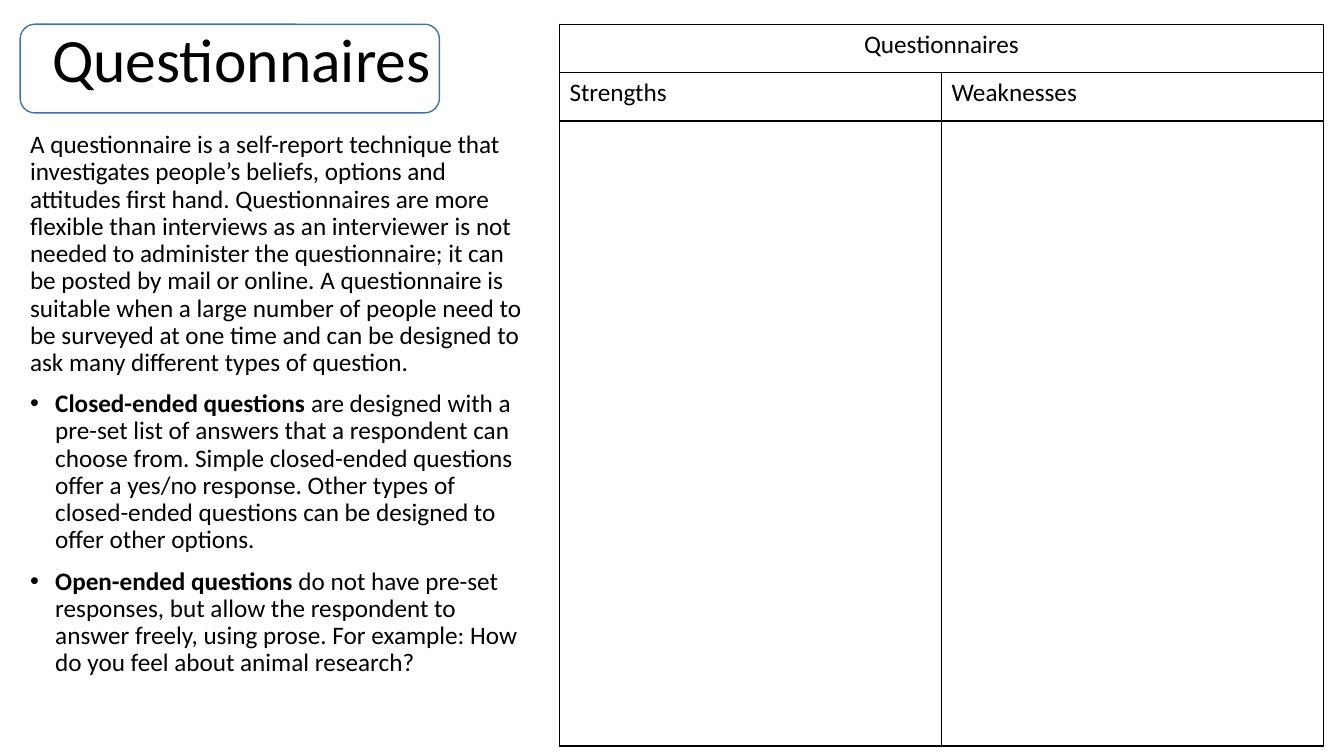
from dataclasses import dataclass

from lxml.etree import SubElement
from pptx import Presentation
from pptx.dml.color import RGBColor
from pptx.enum.shapes import MSO_SHAPE
from pptx.enum.text import MSO_ANCHOR, PP_ALIGN
from pptx.oxml.ns import qn
from pptx.util import Pt


@dataclass(frozen=True)
class Theme:
    """Colours, font and type sizes of the slide."""

    font: str = "Calibri"
    ink: str = "000000"
    frame: str = "43739E"
    title_size: int = 44
    body_size: int = 18


THEME = Theme()

DEFINITION = (
    "A questionnaire is a self-report technique that investigates people’s beliefs, "
    "options and attitudes first hand. Questionnaires are more flexible than interviews "
    "as an interviewer is not needed to administer the questionnaire; it can be posted "
    "by mail or online. A questionnaire is suitable when a large number of people need "
    "to be surveyed at one time and can be designed to ask many different types of question."
)
QUESTION_TYPES = [
    ("Closed-ended questions ",
     "are designed with a pre-set list of answers that a respondent can choose from. "
     "Simple closed-ended questions offer a yes/no response. Other types of closed-ended "
     "questions can be designed to offer other options."),
    ("Open-ended questions ",
     "do not have pre-set responses, but allow the respondent to answer freely, using "
     "prose. For example: How do you feel about animal research?"),
]


def style(paragraph, size):
    """Set the theme font, ink and a size on a paragraph."""
    paragraph.font.name = THEME.font
    paragraph.font.size = Pt(size)
    paragraph.font.color.rgb = RGBColor.from_string(THEME.ink)


def add_text_frame(slide, left, top, width, height, anchor):
    """Add a wrapping text box and return its text frame."""
    frame = slide.shapes.add_textbox(Pt(left), Pt(top), Pt(width), Pt(height)).text_frame
    frame.word_wrap = True
    frame.vertical_anchor = anchor
    return frame


def add_title(slide, wording):
    """Add the slide title."""
    frame = add_text_frame(slide, 30.24, 17.28, 335.5, 55.44, MSO_ANCHOR.MIDDLE)
    title = frame.paragraphs[0]
    title.text = wording
    title.line_spacing = 0.9
    style(title, THEME.title_size)


def make_bullet(paragraph, indent):
    """Give a paragraph a round bullet with a hanging indent."""
    properties = paragraph._p.get_or_add_pPr()
    properties.set("marL", str(Pt(indent)))
    properties.set("indent", str(-Pt(indent)))
    SubElement(properties, qn("a:buFont")).set("typeface", "Arial")
    SubElement(properties, qn("a:buChar")).set("char", "•")


def add_explanation(slide):
    """Add the definition followed by the bulleted question types."""
    frame = add_text_frame(slide, 14.4, 90.72, 369.36, 417.6, MSO_ANCHOR.TOP)
    frame.paragraphs[0].text = DEFINITION
    for term, meaning in QUESTION_TYPES:
        question_type = frame.add_paragraph()
        term_run = question_type.add_run()
        term_run.text = term
        term_run.font.bold = True
        question_type.add_run().text = meaning
    for paragraph in frame.paragraphs:
        paragraph.line_spacing = 0.9
        paragraph.space_before = Pt(10)
        style(paragraph, THEME.body_size)
    for question_type in frame.paragraphs[1:]:
        make_bullet(question_type, 18)


def add_borders(cell):
    """Draw a thin line on all four sides of a cell."""
    properties = cell._tc.get_or_add_tcPr()
    for position, side in enumerate(("lnL", "lnR", "lnT", "lnB")):
        border = properties.makeelement(qn(f"a:{side}"), {"w": str(Pt(1))})
        fill = SubElement(border, qn("a:solidFill"))
        SubElement(fill, qn("a:srgbClr")).set("val", THEME.ink)
        properties.insert(position, border)


def add_evaluation_table(slide):
    """Add the strengths and weaknesses table with room for answers."""
    wording = [["Questionnaires", ""], ["Strengths", "Weaknesses"], ["", ""]]
    row_heights = [34.56, 34.56, 446.4]
    table = slide.shapes.add_table(
        3, 2, Pt(399.6), Pt(17.28), Pt(545.76), Pt(sum(row_heights))).table
    table.first_row = table.horz_banding = False
    for row, height, texts in zip(table.rows, row_heights, wording):
        row.height = Pt(height)
        for cell, text in zip(row.cells, texts):
            cell.text = text
            style(cell.text_frame.paragraphs[0], THEME.body_size)
            cell.fill.background()
            add_borders(cell)
    heading = table.cell(0, 0)
    heading.merge(table.cell(0, 1))
    heading.text_frame.paragraphs[0].alignment = PP_ALIGN.CENTER


def add_title_frame(slide):
    """Outline the title with a rounded rectangle."""
    outline = slide.shapes.add_shape(
        MSO_SHAPE.ROUNDED_RECTANGLE, Pt(14.4), Pt(17.28), Pt(299.52), Pt(63.36))
    outline.shadow.inherit = False
    outline.fill.background()
    outline.line.color.rgb = RGBColor.from_string(THEME.frame)
    outline.line.width = Pt(1)


def main():
    """Build and save the slide."""
    presentation = Presentation()
    presentation.slide_width, presentation.slide_height = Pt(960), Pt(540)
    slide = presentation.slides.add_slide(presentation.slide_layouts[6])
    add_title(slide, "Questionnaires")
    add_explanation(slide)
    add_evaluation_table(slide)
    add_title_frame(slide)
    presentation.save("out.pptx")


if __name__ == "__main__":
    main()
